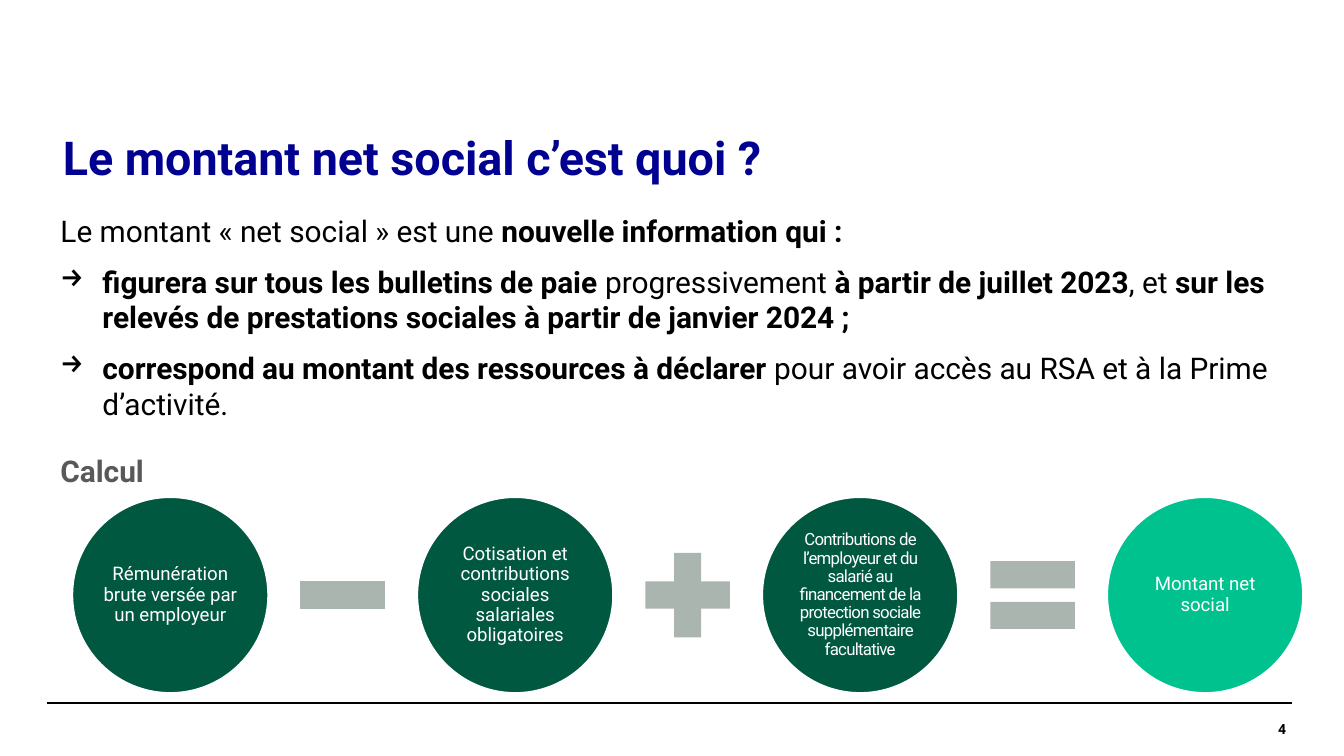
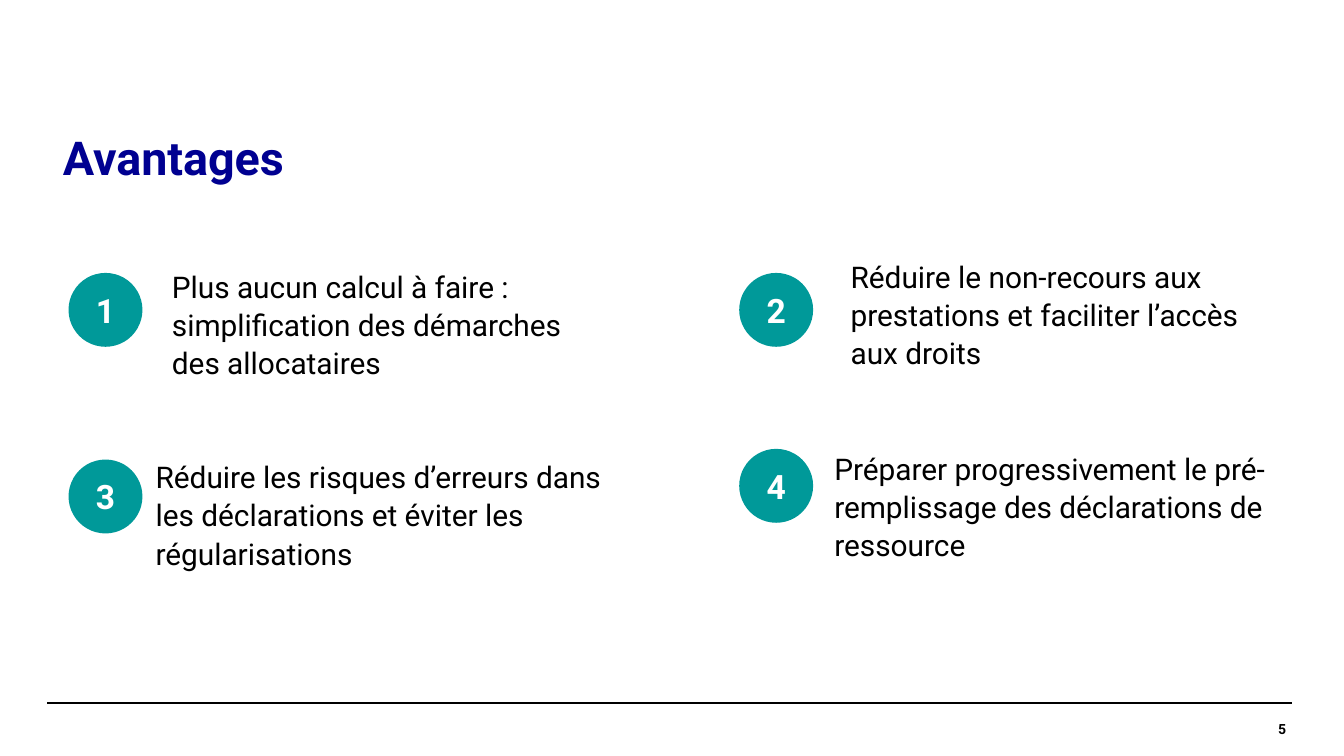
"""Build two slides presenting the "montant net social" and its advantages."""
from lxml.etree import SubElement
from pptx import Presentation
from pptx.dml.color import RGBColor
from pptx.enum.shapes import MSO_CONNECTOR, MSO_SHAPE
from pptx.enum.text import MSO_ANCHOR, PP_ALIGN
from pptx.oxml.ns import qn
from pptx.util import Pt

FONT = "Roboto"
BLACK = RGBColor(0x00, 0x00, 0x00)
WHITE = RGBColor(0xFF, 0xFF, 0xFF)
NAVY = RGBColor(0x00, 0x00, 0x91)
GREY = RGBColor(0x59, 0x59, 0x59)
DARK_GREEN = RGBColor(0x00, 0x58, 0x41)
LIGHT_GREEN = RGBColor(0x00, 0xC2, 0x8F)
OPERATOR_GREY = RGBColor(0xAB, 0xB5, 0xB0)
TEAL = RGBColor(0x00, 0x99, 0x99)

LEFT, CONTENT_WIDTH = 25.2, 663.4
RULE_TOP, RULE_RIGHT = 376.6, 692
INSET_X, INSET_Y = 7.2, 3.6

INTRO = [("Le montant « net social » est une ", False), ("nouvelle information qui :", True)]
POINTS = [
    [
        ("figurera sur tous les bulletins de paie ", True),
        ("progressivement ", False),
        ("à partir de juillet 2023", True),
        (", et ", False),
        ("sur les relevés de prestations sociales à partir de janvier 2024 ;", True),
    ],
    [
        ("correspond au montant des ressources à déclarer ", True),
        ("pour avoir accès au RSA et à la Prime d’activité.", False),
    ],
]

TERMS = [
    ("Rémunération brute versée par un employeur", DARK_GREEN, 10, 0),
    ("Cotisation et contributions sociales salariales obligatoires", DARK_GREEN, 10, 0),
    ("Contributions de l’employeur et du salarié au financement de la protection "
     "sociale supplémentaire facultative", DARK_GREEN, 9, -0.4),
    ("Montant net social", LIGHT_GREEN, 10, 0),
]
OPERATORS = [MSO_SHAPE.MATH_MINUS, MSO_SHAPE.MATH_PLUS, MSO_SHAPE.MATH_EQUAL]
TERM_LEFT, TERM_TOP, TERM_SIZE, TERM_STEP = 38.2, 265.8, 106, 184.8
OPERATOR_SIZE = 61.6

BADGE_SIZE = 39.6
ADVANTAGES = [
    ("1", (36.7, 146.2), (85, 139), 229.7,
     "Plus aucun calcul à faire : simplification des démarches des allocataires"),
    ("2", (396, 146.2), (448.6, 133.5), 229.7,
     "Réduire le non-recours aux prestations et faciliter l’accès aux droits"),
    ("3", (36.7, 246.2), (76.3, 240.9), 254.9,
     "Réduire les risques d’erreurs dans les déclarations et éviter les régularisations"),
    ("4", (396, 240.5), (439.9, 236.5), 254.9,
     "Préparer progressivement le pré-remplissage des déclarations de ressource"),
]


def set_frame(shape, inset_x=0, inset_y=0, anchor=MSO_ANCHOR.TOP):
    frame = shape.text_frame
    frame.word_wrap = True
    frame.margin_left = frame.margin_right = Pt(inset_x)
    frame.margin_top = frame.margin_bottom = Pt(inset_y)
    frame.vertical_anchor = anchor
    return frame


def add_box(page, left, top, width, height, **frame_options):
    box = page.shapes.add_textbox(Pt(left), Pt(top), Pt(width), Pt(height))
    return set_frame(box, **frame_options)


def add_shape(page, kind, left, top, size, fill, line=None):
    shape = page.shapes.add_shape(kind, Pt(left), Pt(top), Pt(size), Pt(size))
    shape.shadow.inherit = False
    shape.fill.solid()
    shape.fill.fore_color.rgb = fill
    if line is None:
        shape.line.fill.background()
    else:
        shape.line.color.rgb = line
        shape.line.width = Pt(2)
    return shape


def write(para, spans, size, color=BLACK, bold=False, align=PP_ALIGN.LEFT,
          line_spacing=1.0, after=0, margin=0, indent=0, bullet=None, tracking=0):
    para.alignment = align
    para.line_spacing = line_spacing
    para.space_after = Pt(after)
    properties = para._p.get_or_add_pPr()
    properties.set("marL", str(Pt(margin)))
    properties.set("indent", str(Pt(indent)))
    if bullet:
        SubElement(properties, qn("a:buChar")).set("char", bullet)
    para.font.name = FONT
    para.font.size = Pt(size)
    para.font.color.rgb = color
    para.font.bold = bold
    for text, strong in ([(spans, bold)] if isinstance(spans, str) else spans):
        span = para.add_run()
        span.text = text
        if strong != bold:
            span.font.bold = strong
        if tracking:
            span.font._element.set("spc", str(round(tracking * 100)))


def add_page(deck, title, number):
    page = deck.slides.add_slide(deck.slide_layouts[6])
    rule = page.shapes.add_connector(
        MSO_CONNECTOR.STRAIGHT, Pt(LEFT), Pt(RULE_TOP), Pt(RULE_RIGHT), Pt(RULE_TOP))
    rule.line.color.rgb = BLACK
    rule.line.width = Pt(0.8)
    SubElement(rule._element.spPr, qn("a:effectLst"))
    footer = add_box(page, 582.5, RULE_TOP, 106.5, 28, anchor=MSO_ANCHOR.MIDDLE)
    write(footer.paragraphs[0], number, 7.5, bold=True, align=PP_ALIGN.RIGHT)
    heading = add_box(page, LEFT, 64.8, CONTENT_WIDTH, 42.5, inset_x=INSET_X,
                      inset_y=INSET_Y, anchor=MSO_ANCHOR.MIDDLE)
    write(heading.paragraphs[0], title, 25, NAVY, bold=True, line_spacing=0.9, margin=1.4)
    return page


def add_definition(page):
    body = add_box(page, LEFT, 113.8, CONTENT_WIDTH, 118.8)
    write(body.paragraphs[0], INTRO, 16, after=8, margin=7.2)
    for point in POINTS:
        write(body.add_paragraph(), point, 16, after=8, margin=29.7, indent=-22.5, bullet="→")
    label = add_box(page, LEFT, 242.6, 90.7, 41.8)
    write(label.paragraphs[0], "Calcul", 16, GREY, bold=True, indent=7.2)


def add_equation(page):
    for index, (text, fill, size, tracking) in enumerate(TERMS):
        circle = add_shape(page, MSO_SHAPE.OVAL, TERM_LEFT + index * TERM_STEP, TERM_TOP,
                           TERM_SIZE, fill, WHITE)
        frame = set_frame(circle, 0.7, 0.7, MSO_ANCHOR.MIDDLE)
        write(frame.paragraphs[0], text, size, WHITE, align=PP_ALIGN.CENTER,
              line_spacing=0.9, tracking=tracking)
    gap = (TERM_STEP - TERM_SIZE - OPERATOR_SIZE) / 2
    top = TERM_TOP + (TERM_SIZE - OPERATOR_SIZE) / 2
    for index, kind in enumerate(OPERATORS):
        left = TERM_LEFT + index * TERM_STEP + TERM_SIZE + gap
        add_shape(page, kind, left, top, OPERATOR_SIZE, OPERATOR_GREY)


def add_advantages(page):
    for number, badge_at, text_at, width, text in ADVANTAGES:
        badge = add_shape(page, MSO_SHAPE.OVAL, *badge_at, BADGE_SIZE, TEAL)
        frame = set_frame(badge, anchor=MSO_ANCHOR.MIDDLE)
        write(frame.paragraphs[0], number, 18, WHITE, bold=True, align=PP_ALIGN.CENTER)
        box = add_box(page, *text_at, width, 69, inset_x=INSET_X, inset_y=INSET_Y)
        write(box.paragraphs[0], text, 16, line_spacing=1.07)


def main():
    deck = Presentation()
    deck.slide_width, deck.slide_height = Pt(720), Pt(405)
    page = add_page(deck, "Le montant net social c’est quoi ?", "4")
    add_definition(page)
    add_equation(page)
    add_advantages(add_page(deck, "Avantages", "5"))
    deck.save("out.pptx")


if __name__ == "__main__":
    main()
